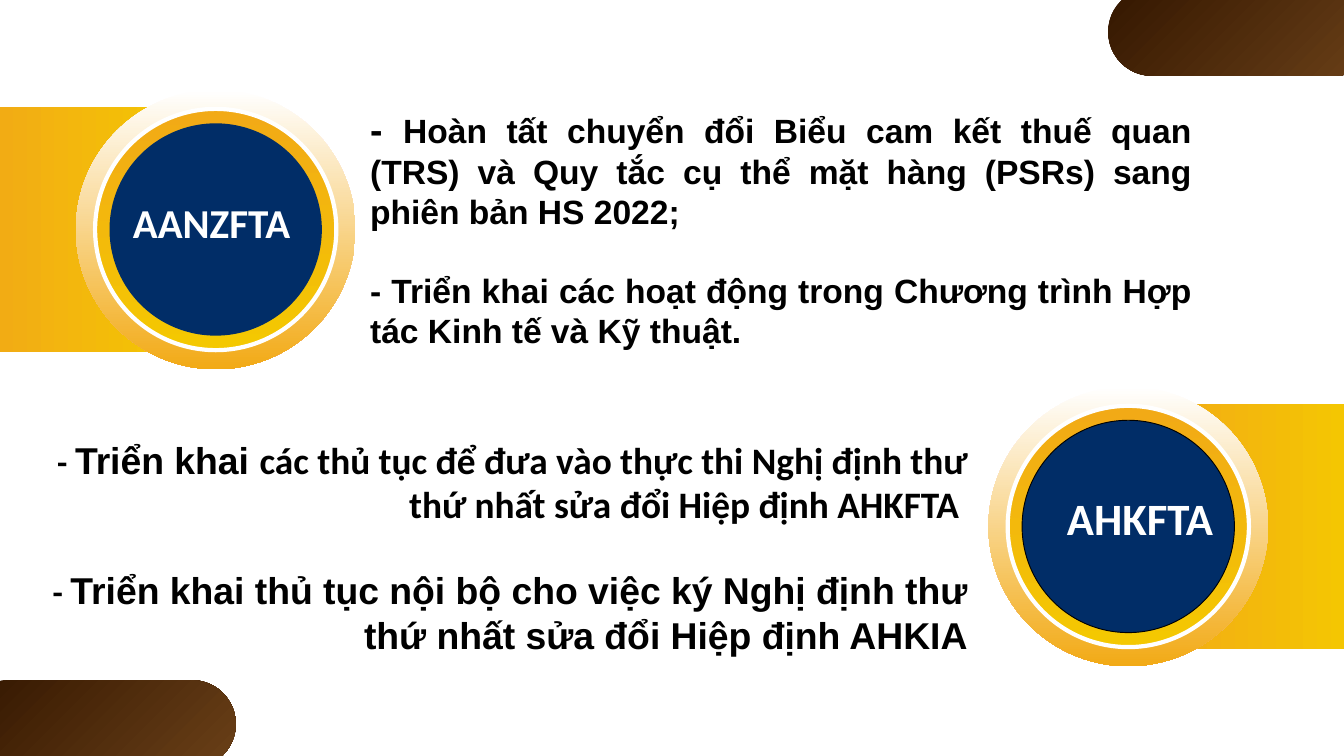
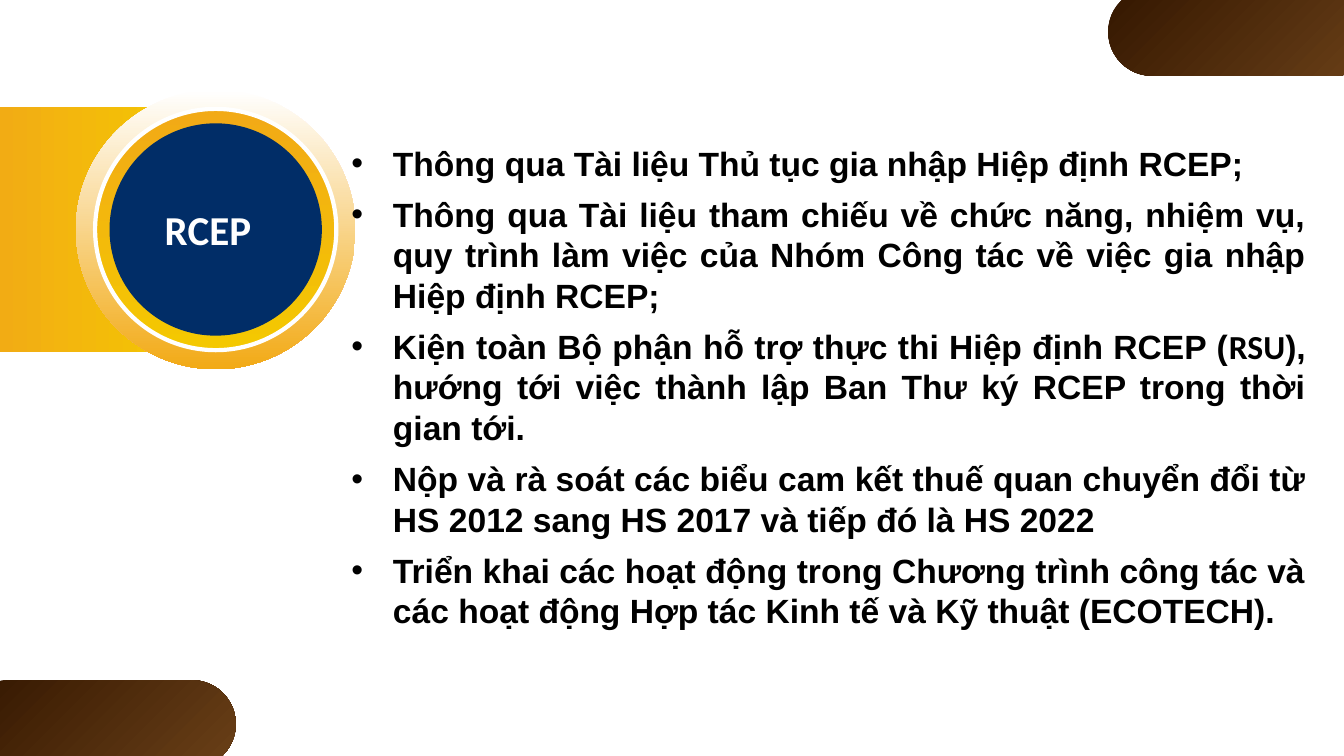
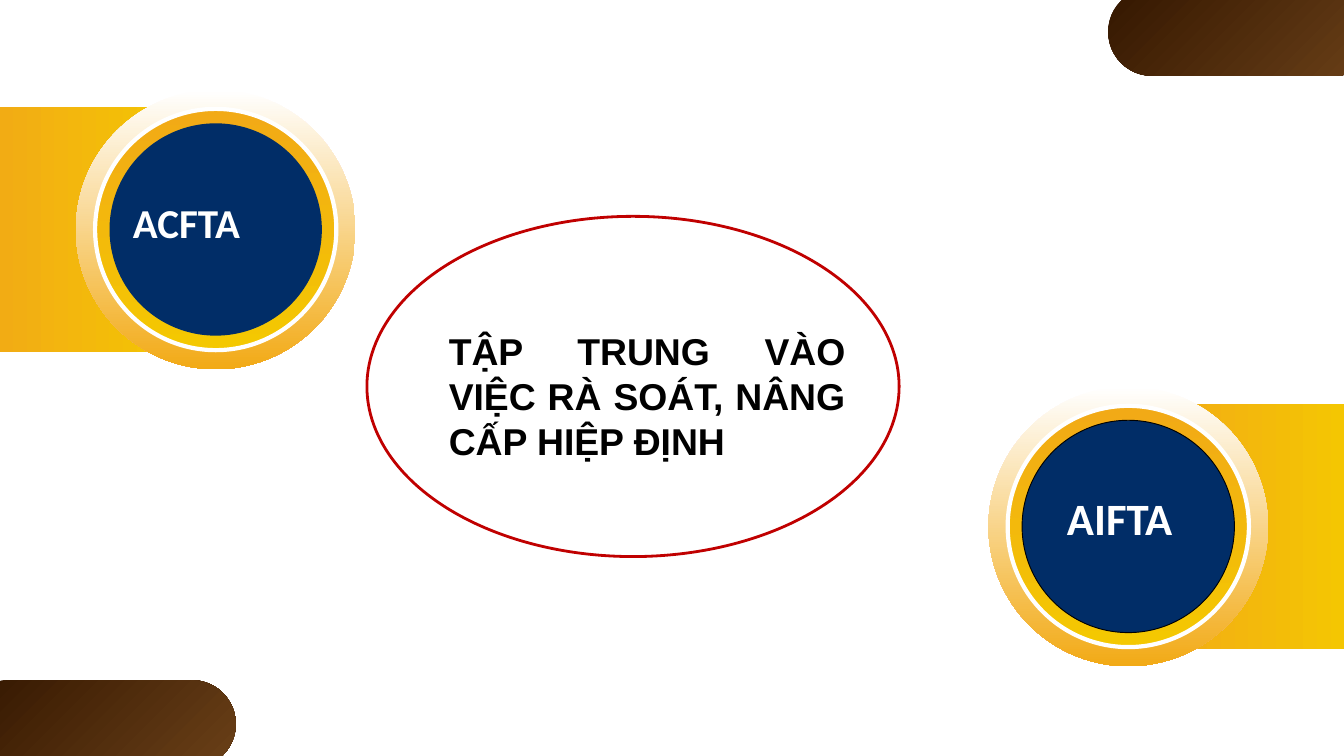
"""Build three slides on trade agreement progress."""
from dataclasses import dataclass

from lxml.etree import SubElement
from pptx import Presentation
from pptx.dml.color import RGBColor
from pptx.enum.shapes import MSO_SHAPE as Preset
from pptx.enum.text import PP_ALIGN as Align
from pptx.oxml.ns import qn
from pptx.shapes.autoshape import Shape
from pptx.slide import Slide
from pptx.util import Emu, Inches, Pt

WIDTH, HEIGHT = Inches(20), Inches(11.25)

WHITE = RGBColor(0xFF, 0xFF, 0xFF)
BLACK = RGBColor(0x00, 0x00, 0x00)
NAVY = RGBColor(0x01, 0x2D, 0x67)
ORANGE = RGBColor(0xF2, 0xAA, 0x16)
GOLD = RGBColor(0xF4, 0xC8, 0x01)
DARK_BROWN = RGBColor(0x34, 0x17, 0x00)
BROWN = RGBColor(0x6A, 0x40, 0x18)
RED = RGBColor(0xC0, 0x00, 0x00)

RIGHTWARD, DOWNWARD, DIAGONAL = 0, 270, 315


@dataclass(frozen=True)
class Area:
    """Place and size in percent of the slide's width and height."""
    left: float
    top: float
    width: float
    height: float

    def mirrored(self) -> "Area":
        """Return the area turned half round the slide's centre."""
        return Area(100 - self.left - self.width, 100 - self.top - self.height,
                    self.width, self.height)

    def box(self) -> tuple[Emu, Emu, Emu, Emu]:
        """Return left, top, width and height as lengths."""
        return (Emu(round(WIDTH * self.left / 100)), Emu(round(HEIGHT * self.top / 100)),
                Emu(round(WIDTH * self.width / 100)), Emu(round(HEIGHT * self.height / 100)))


@dataclass(frozen=True)
class Span:
    """A stretch of bold text in one font and size."""
    text: str
    size: int = 36
    font: str = "Arial"


@dataclass(frozen=True)
class Outline:
    """Colour and width in points of a shape's line."""
    color: RGBColor
    width: float


TAB = Area(-1.05, 14.2, 15.3, 32.32)
CORNER = Area(82.45, -1.6, 20.15, 11.64)
OVAL = Area(27.3, 28.62, 39.6, 45)
CENTRE_X, CENTRE_Y = 16.05, 30.36
RING, DISC, CORE = 20.8, 17.95, 15.8

LEFT_LABEL = Area(9.4, 25.69, 14.95, 7.47)
MIDDLE_LABEL = Area(8, 26.58, 14.95, 7.47)
RIGHT_LABEL = Area(78.9, 64.44, 12.3, 8.09)


def circle(diameter: float) -> Area:
    """Return a badge circle whose diameter is a share of the slide's width."""
    height = diameter * WIDTH / HEIGHT
    return Area(CENTRE_X - diameter / 2, CENTRE_Y - height / 2, diameter, height)


def draw(page: Slide, preset: Preset, area: Area, *colors: RGBColor,
         angle: int = RIGHTWARD, outline: Outline | None = None) -> Shape:
    """Draw a preset shape with no fill, a plain fill or a two-colour gradient."""
    shape = page.shapes.add_shape(preset, *area.box())
    shape.shadow.inherit = False
    if len(colors) == 2:
        shape.fill.gradient()
        shape.fill.gradient_angle = angle
        for stop, color in zip(shape.fill.gradient_stops, colors):
            stop.color.rgb = color
    elif colors:
        shape.fill.solid()
        shape.fill.fore_color.rgb = colors[0]
    else:
        shape.fill.background()
    if outline:
        shape.line.color.rgb = outline.color
        shape.line.width = Pt(outline.width)
    else:
        shape.line.fill.background()
    return shape


def write(page: Slide, area: Area, *paragraphs: list[Span], color: RGBColor = BLACK,
          align: Align = Align.JUSTIFY, gap: float = 0, indent: float = 0,
          bullet: bool = False) -> None:
    """Write paragraphs of bold spans in a wrapping text box."""
    frame = page.shapes.add_textbox(*area.box()).text_frame
    frame.word_wrap = True
    for index, spans in enumerate(paragraphs):
        para = frame.add_paragraph() if index else frame.paragraphs[0]
        para.alignment = align
        if index:
            para.space_before = Pt(gap)
        properties = para._p.get_or_add_pPr()
        properties.set("marL", str(Inches(indent)))
        if bullet:
            properties.set("indent", str(-Inches(indent)))
            SubElement(properties, qn("a:buFont")).set("typeface", "Arial")
            SubElement(properties, qn("a:buChar")).set("char", "•")
        for span in spans:
            run = para.add_run()
            run.text = span.text
            run.font.name = span.font
            run.font.size = Pt(span.size)
            run.font.bold = True
            run.font.color.rgb = color


def draw_badge(page: Slide, label: str, label_area: Area, *, size: int = 44,
               align: Align = Align.LEFT, mirrored: bool = False) -> None:
    """Draw an edge tab with its round badge and label."""
    tab, ring, disc, core = (area.mirrored() if mirrored else area
                             for area in (TAB, *map(circle, (RING, DISC, CORE))))
    draw(page, Preset.RECTANGLE, tab, ORANGE, GOLD)
    draw(page, Preset.OVAL, ring, WHITE, ORANGE, angle=DOWNWARD)
    draw(page, Preset.OVAL, disc, ORANGE, GOLD, angle=DOWNWARD, outline=Outline(WHITE, 4.5))
    draw(page, Preset.OVAL, core, NAVY, outline=Outline(BLACK, 1) if mirrored else None)
    write(page, label_area, [Span(label, size, "Calibri")], color=WHITE, align=align)


def add_page(deck: Presentation) -> Slide:
    """Add a blank slide with its two brown corners."""
    page = deck.slides.add_slide(deck.slide_layouts[6])
    for area in (CORNER, CORNER.mirrored()):
        corner = draw(page, Preset.ROUNDED_RECTANGLE, area, DARK_BROWN, BROWN, angle=DIAGONAL)
        corner.adjustments[0] = 0.5
    return page


def add_pair_page(deck: Presentation, left: str, right: str) -> Slide:
    """Add a slide with a badge on each side."""
    page = add_page(deck)
    draw_badge(page, left, LEFT_LABEL)
    draw_badge(page, right, RIGHT_LABEL, size=48, mirrored=True)
    return page


def add_tasks(deck: Presentation) -> None:
    """Add the slide on AANZFTA and AHKFTA tasks."""
    page = add_pair_page(deck, "AANZFTA", "AHKFTA")
    write(page, Area(27.05, 13.6, 62.15, 33.78),
          [Span("- ", 40),
           Span("Hoàn tất chuyển đổi Biểu cam kết thuế quan (TRS) và Quy tắc cụ thể "
                "mặt hàng (PSRs) sang phiên bản HS 2022;")],
          [Span("- Triển khai các hoạt động trong Chương trình Hợp tác Kinh tế và Kỹ thuật.")],
          gap=41)
    dash = Span("- ", 36, "Calibri")
    write(page, Area(-1.8, 57.33, 74.3, 40.98),
          [dash, Span("Triển khai ", 40),
           Span("các thủ tục để đưa vào thực thi Nghị định thư thứ nhất sửa đổi "
                "Hiệp định AHKFTA ", 40, "Calibri")],
          [dash, Span("Triển khai thủ tục nội bộ cho việc ký Nghị định thư thứ nhất "
                      "sửa đổi Hiệp định AHKIA", 40)],
          align=Align.RIGHT, gap=44, indent=0.5)


def add_rcep(deck: Presentation) -> None:
    """Add the slide on RCEP."""
    page = add_page(deck)
    draw_badge(page, "RCEP", MIDDLE_LABEL, align=Align.CENTER)
    write(page, Area(25.65, 18.4, 72, 66.13),
          [Span("Thông qua Tài liệu Thủ tục gia nhập Hiệp định RCEP;")],
          [Span("Thông qua Tài liệu tham chiếu về chức năng, nhiệm vụ, quy trình làm việc "
                "của Nhóm Công tác về việc gia nhập Hiệp định RCEP;")],
          [Span("Kiện toàn Bộ phận hỗ trợ thực thi Hiệp định RCEP ("),
           Span("RSU", font="Calibri"),
           Span("), hướng tới việc thành lập Ban Thư ký RCEP trong thời gian tới.")],
          [Span("Nộp và rà soát các biểu cam kết thuế quan chuyển đổi từ HS 2012 sang "
                "HS 2017 và tiếp đó là HS 2022")],
          [Span("Triển khai các hoạt động trong Chương trình công tác và các hoạt động "
                "Hợp tác Kinh tế và Kỹ thuật (ECOTECH).")],
          gap=12, indent=0.62, bullet=True)


def add_upgrades(deck: Presentation) -> None:
    """Add the slide on upgrading ACFTA and AIFTA."""
    page = add_pair_page(deck, "ACFTA", "AIFTA")
    draw(page, Preset.OVAL, OVAL, outline=Outline(RED, 3))
    write(page, Area(32.9, 43.02, 30.5, 18.84),
          [Span("TẬP TRUNG VÀO VIỆC RÀ SOÁT, NÂNG CẤP HIỆP ĐỊNH", 40)])


def main() -> None:
    """Build and save the deck."""
    deck = Presentation()
    deck.slide_width, deck.slide_height = WIDTH, HEIGHT
    add_tasks(deck)
    add_rcep(deck)
    add_upgrades(deck)
    deck.save("out.pptx")


if __name__ == "__main__":
    main()
